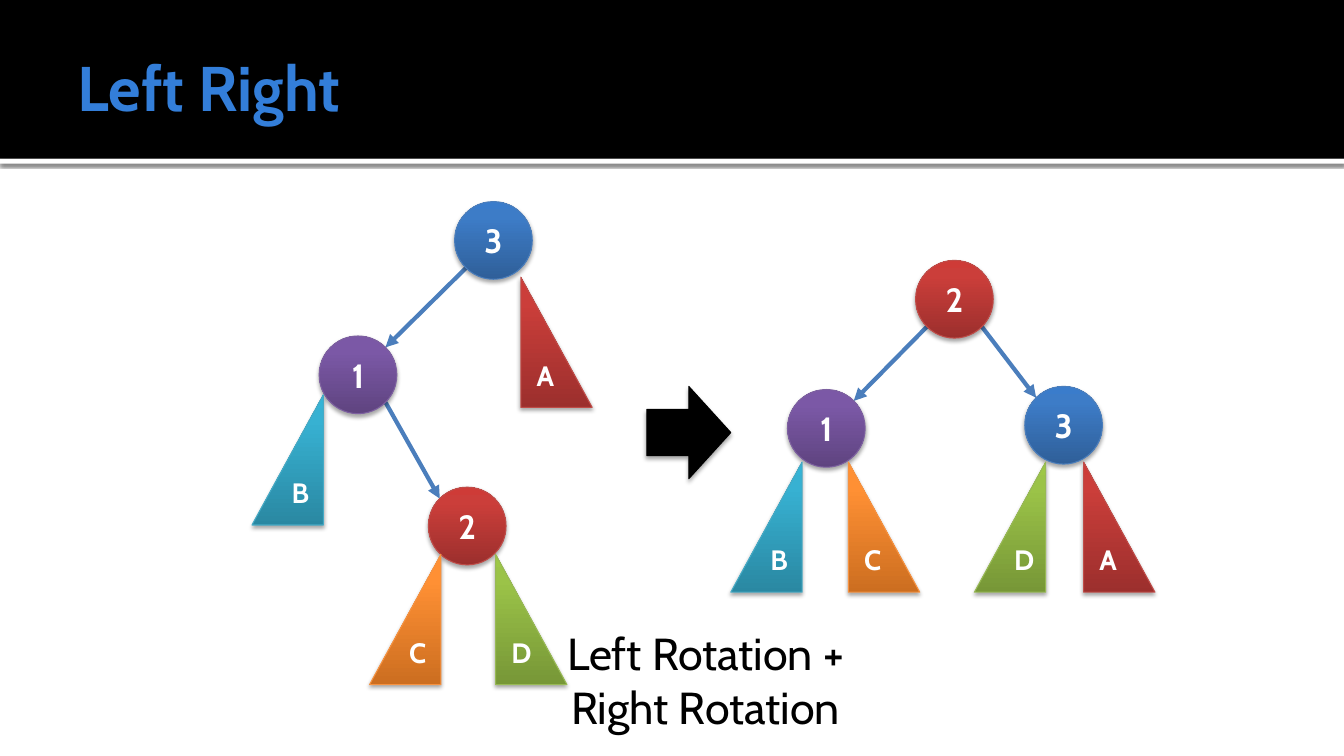
"""Build the slide showing a left-right rotation of a binary search tree."""
import copy
import math
from dataclasses import dataclass
from typing import Any, NamedTuple

import lxml.etree
import pptx
import pptx.dml.color
import pptx.enum.shapes
import pptx.enum.text
import pptx.oxml.ns
import pptx.util

EMU_PER_PX = 9525
NODE_SIZE = 74
SUBTREE_WIDTH, SUBTREE_HEIGHT = 68, 124
SHAPES = pptx.enum.shapes.MSO_SHAPE
ALIGN = pptx.enum.text.PP_ALIGN
ANCHOR = pptx.enum.text.MSO_ANCHOR
qn = pptx.oxml.ns.qn


class Swatch(NamedTuple):
    bottom: str
    upper: str
    top: str
    line: str


class Shadow(NamedTuple):
    opacity: int
    blur: float
    distance: float


class Box(NamedTuple):
    left: int
    top: int
    width: int
    height: int


BLUE = Swatch("2F5F99", "3D7CC7", "3A7CCB", "4B7EBC")
RED = Swatch("9C2F2D", "CB3E3A", "CE3B37", "BF4C48")
PURPLE = Swatch("5F4480", "7B58A6", "7C57A8", "7D60A0")
TEAL = Swatch("2A88A2", "37B1D2", "34B4D6", "46AAC5")
ORANGE = Swatch("CC6E20", "FF9034", "FF9136", "F69240")
GREEN = Swatch("779737", "9BC348", "9DC746", "98B955")


@dataclass(frozen=True)
class Theme:
    font: str = "Cabin"
    black: str = "000000"
    white: str = "FFFFFF"
    title: str = "337ED9"
    edge: str = "4B7EBC"
    title_size: int = 45
    caption_size: int = 32
    node_size: int = 24
    subtree_size: int = 20
    edge_width: float = 3
    outline_width: float = 0.75
    shape_shadow: Shadow = Shadow(35, 3.1, 1.8)
    band_shadow: Shadow = Shadow(60, 2.5, 0.8)


THEME = Theme()
SWATCHES = {"1": PURPLE, "2": RED, "3": BLUE, "A": RED, "B": TEAL, "C": ORANGE, "D": GREEN}


@dataclass(frozen=True)
class Subtree:
    label: str
    left: int
    top: int
    mirrored: bool = False


@dataclass(frozen=True)
class Tree:
    nodes: dict[str, tuple[int, int]]
    edges: list[tuple[str, str]]
    subtrees: list[Subtree]


TREES = [
    Tree(
        {"3": (433, 192), "2": (408, 464), "1": (304, 320)},
        [("3", "1"), ("1", "2")],
        [Subtree("B", 240, 376, True), Subtree("A", 496, 264),
         Subtree("C", 352, 528, True), Subtree("D", 472, 528)],
    ),
    Tree(
        {"3": (976, 368), "2": (872, 248), "1": (750, 371)},
        [("2", "3"), ("2", "1")],
        [Subtree("B", 696, 440, True), Subtree("A", 1032, 440),
         Subtree("C", 808, 440), Subtree("D", 928, 440, True)],
    ),
]


def px(*lengths: float) -> list[int]:
    return [round(length * EMU_PER_PX) for length in lengths]


def rgb(value: str) -> pptx.dml.color.RGBColor:
    return pptx.dml.color.RGBColor.from_string(value)


def set_formats(target: Any, formats: dict[str, Any]) -> None:
    for name, value in formats.items():
        setattr(target, name, value)


def write_text(shape: Any, text: str, size: int, color: str, bold: bool,
               align: Any, frame_formats: dict[str, Any]) -> None:
    frame = shape.text_frame
    frame.text = text
    set_formats(frame, {"word_wrap": True} | frame_formats)
    paragraph = frame.paragraphs[0]
    paragraph.alignment = align
    set_formats(paragraph.font, {"name": THEME.font, "size": pptx.util.Pt(size), "bold": bold})
    paragraph.font.color.rgb = rgb(color)


def set_shadow(shape: Any, shadow: Shadow) -> None:
    shape.shadow.inherit = False
    effects = shape._element.spPr.find(qn("a:effectLst"))
    outer = lxml.etree.SubElement(effects, qn("a:outerShdw"), {
        "blurRad": str(pptx.util.Pt(shadow.blur)), "dist": str(pptx.util.Pt(shadow.distance)),
        "dir": "5400000", "algn": "ctr", "rotWithShape": "0"})
    color = lxml.etree.SubElement(outer, qn("a:srgbClr"), val=THEME.black)
    lxml.etree.SubElement(color, qn("a:alpha"), val=str(shadow.opacity * 1000))


def set_outline(shape: Any, color: str) -> None:
    shape.line.color.rgb = rgb(color)
    shape.line.width = pptx.util.Pt(THEME.outline_width)


def set_gradient(shape: Any, swatch: Swatch) -> None:
    shape.fill.gradient()
    shape.fill.gradient_angle = 90
    stop_list = shape._element.spPr.find(".//" + qn("a:gsLst"))
    stop_list.insert(1, copy.deepcopy(stop_list[0]))
    for stop, position, color in zip(shape.fill.gradient_stops, (0, 0.8, 1), swatch[:3]):
        stop.position = position
        stop.color.rgb = rgb(color)


def add_solid(shapes: Any, kind: Any, box: Box, color: str) -> Any:
    shape = shapes.add_shape(kind, *px(*box))
    shape.fill.solid()
    shape.fill.fore_color.rgb = rgb(color)
    shape.line.fill.background()
    shape.shadow.inherit = False
    return shape


def add_labelled(shapes: Any, kind: Any, box: Box, label: str, size: int) -> Any:
    shape = shapes.add_shape(kind, *px(*box))
    swatch = SWATCHES[label]
    set_gradient(shape, swatch)
    set_outline(shape, swatch.line)
    set_shadow(shape, THEME.shape_shadow)
    write_text(shape, label, size, THEME.white, True, ALIGN.CENTER,
               {"vertical_anchor": ANCHOR.MIDDLE})
    return shape


def add_edge(shapes: Any, parent: tuple[int, int], child: tuple[int, int]) -> None:
    radius = NODE_SIZE / 2
    reach = radius * math.sqrt(0.5)
    side = math.copysign(reach, child[0] - parent[0])
    connector = shapes.add_connector(
        pptx.enum.shapes.MSO_CONNECTOR.STRAIGHT,
        *px(parent[0] + radius + side, parent[1] + radius + reach,
            child[0] + radius - side, child[1] + radius - reach))
    connector.line.color.rgb = rgb(THEME.edge)
    connector.line.width = pptx.util.Pt(THEME.edge_width)
    lxml.etree.SubElement(connector.line._get_or_add_ln(), qn("a:tailEnd"), type="triangle")
    lxml.etree.SubElement(connector._element.spPr, qn("a:effectLst"))


def add_tree(slide: Any, tree: Tree) -> None:
    shapes = slide.shapes.add_group_shape().shapes
    for parent, child in tree.edges:
        add_edge(shapes, tree.nodes[parent], tree.nodes[child])
    for label, corner in tree.nodes.items():
        add_labelled(shapes, SHAPES.OVAL, Box(*corner, NODE_SIZE, NODE_SIZE),
                     label, THEME.node_size)
    for subtree in tree.subtrees:
        box = Box(subtree.left, subtree.top, SUBTREE_WIDTH, SUBTREE_HEIGHT)
        shape = add_labelled(shapes, SHAPES.RIGHT_TRIANGLE, box,
                             subtree.label, THEME.subtree_size)
        if subtree.mirrored:
            shape._element.spPr.find(qn("a:xfrm")).set("flipH", "1")


def add_header(slide: Any) -> None:
    band = add_solid(slide.shapes, SHAPES.RECTANGLE, Box(0, 151, 1280, 5), THEME.white)
    set_shadow(band, THEME.band_shadow)
    add_solid(slide.shapes, SHAPES.RECTANGLE, Box(0, 0, 1280, 151), THEME.black)
    title = slide.shapes.title
    set_formats(title, dict(zip(Box._fields, px(64, 16, 1152, 132))))
    margins = dict(zip(("margin_left", "margin_top", "margin_right", "margin_bottom"),
                       px(10, 5, 5, 5)))
    write_text(title, "Left Right", THEME.title_size, THEME.title, True, ALIGN.LEFT,
               margins | {"vertical_anchor": ANCHOR.MIDDLE})
    slide.shapes._spTree.append(title._element)


def main() -> None:
    presentation = pptx.Presentation()
    presentation.slide_width, presentation.slide_height = px(1280, 720)
    slide = presentation.slides.add_slide(presentation.slide_layouts[5])
    add_header(slide)
    for tree in TREES:
        add_tree(slide, tree)
    arrow = add_solid(slide.shapes, SHAPES.RIGHT_ARROW, Box(616, 368, 80, 88), THEME.black)
    set_outline(arrow, THEME.black)
    set_shadow(arrow, THEME.shape_shadow)
    caption = slide.shapes.add_textbox(*px(504, 591, 336, 113))
    write_text(caption, "Left Rotation + Right Rotation", THEME.caption_size, THEME.black,
               False, ALIGN.CENTER, {"auto_size": pptx.enum.text.MSO_AUTO_SIZE.SHAPE_TO_FIT_TEXT})
    presentation.save("out.pptx")


if __name__ == "__main__":
    main()
